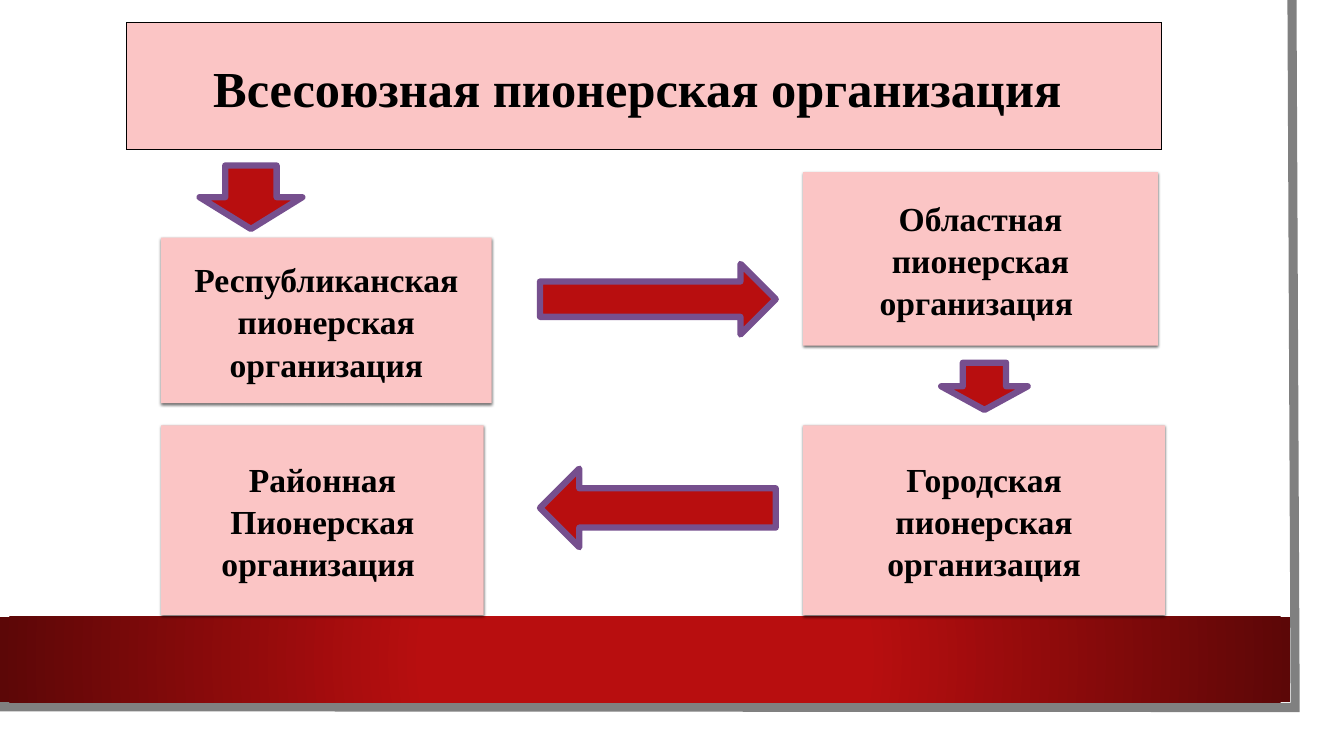
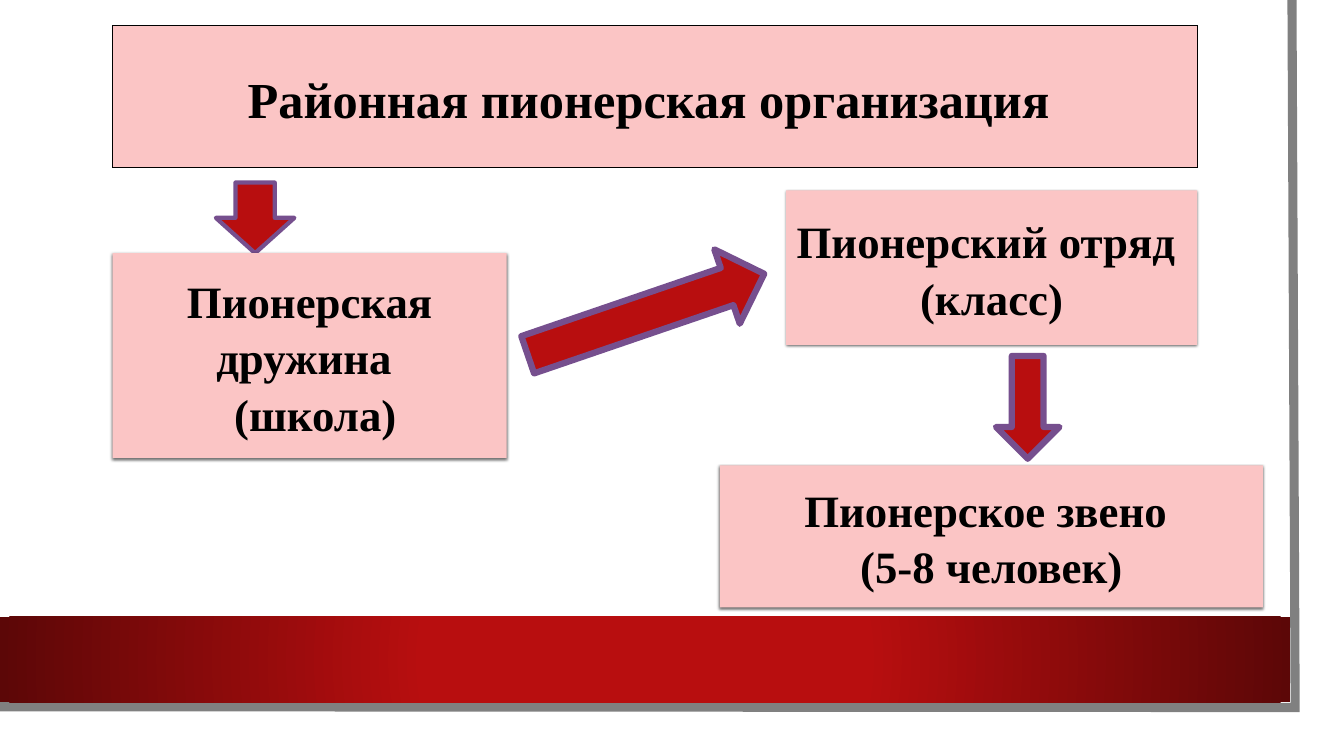
from lxml import etree
from pptx import Presentation
from pptx.dml.color import RGBColor
from pptx.enum.shapes import MSO_SHAPE as Shape
from pptx.enum.text import MSO_ANCHOR as Anchor, PP_ALIGN as Align
from pptx.oxml import parse_xml
from pptx.oxml.ns import qn
from pptx.util import Cm, Pt

# Shared look
FONT = "Times New Roman"
WHITE, BLACK, GREY = "FFFFFF", "000000", "808080"
PINK, RED, DARK_RED, PURPLE = "FBC5C5", "B80E0F", "5C0707", "764F8E"
TITLE_SIZE = 36
LINE_SPACING = 1.05
EDGE = [(32.56, 0), (32.64, 17.83), (0, 17.81)]
BAND = (0, 15.54, 32.51, 2.16)
DOWN, RIGHT, LEFT = Shape.DOWN_ARROW, Shape.RIGHT_ARROW, Shape.LEFT_ARROW

# Content: places are left, top, width, height in centimetres;
# an arrow is kind, place, line width, rotation
SLIDES = [
    {
        "title": ("Всесоюзная пионерская организация ", (3.18, 0.58, 26.09, 3.18)),
        "size": 24,
        "boxes": [
            (["Республиканская пионерская", "организация"], (4.06, 5.99, 8.33, 4.17)),
            (["Областная пионерская организация "], (20.24, 4.34, 8.94, 4.37)),
            (["Городская", "пионерская организация"], (20.24, 10.72, 9.12, 4.78)),
            (["Районная", "Пионерская", "организация "], (4.06, 10.72, 8.13, 4.78)),
        ],
        "arrows": [
            (DOWN, (5.03, 4.17, 2.59, 1.6), 4.5, 0),
            (RIGHT, (13.61, 6.65, 5.94, 1.78), 4.5, 0),
            (DOWN, (23.72, 9.14, 2.18, 1.19), 4.5, 0),
            (LEFT, (13.61, 11.81, 5.94, 1.98), 4.5, 0),
        ],
    },
    {
        "title": ("Районная пионерская организация ", (2.84, 0.64, 27.33, 3.58)),
        "size": 32,
        "boxes": [
            (["Пионерская дружина ", " (школа)"], (2.84, 6.38, 9.93, 5.16)),
            (["Пионерский отряд ", "(класс)"], (19.81, 4.8, 10.36, 3.89)),
            (["Пионерское звено ", "(5-8 человек)"], (18.14, 11.73, 13.69, 3.58)),
        ],
        "arrows": [
            (DOWN, (5.44, 4.6, 1.98, 1.78), 3, 0),
            (RIGHT, (13.13, 6.93, 6.3, 1.98), 4.5, 341.1),
            (DOWN, (25.1, 8.97, 1.6, 2.59), 4.5, 0),
        ],
    },
]

DRAWING = 'xmlns:a="http://schemas.openxmlformats.org/drawingml/2006/main"'
BAND_FILL = f"""<a:gradFill {DRAWING} rotWithShape="1"><a:gsLst>
<a:gs pos="34000"><a:srgbClr val="{RED}"/></a:gs>
<a:gs pos="100000"><a:srgbClr val="{DARK_RED}"/></a:gs></a:gsLst>
<a:path path="circle"><a:fillToRect l="50000" t="50000" r="50000" b="50000"/></a:path>
</a:gradFill>"""
BOX_SHADOW = f"""<a:outerShdw {DRAWING} blurRad="{Pt(2)}" dist="{Pt(1)}" dir="5400000"
rotWithShape="0"><a:srgbClr val="{BLACK}"><a:alpha val="60000"/></a:srgbClr></a:outerShdw>"""


def colour(value):
    return RGBColor.from_string(value)


def set_line(shape, value, width, join):
    shape.line.color.rgb = colour(value)
    shape.line.width = Pt(width)
    outline = shape._element.spPr.find(qn("a:ln"))
    corner = etree.SubElement(outline, qn(f"a:{join}"))
    if join == "miter":
        corner.set("lim", "800000")


def add_block(page, kind, place, fill):
    block = page.shapes.add_shape(kind, *map(Cm, place))
    block.shadow.inherit = False
    block.fill.solid()
    block.fill.fore_color.rgb = colour(fill)
    block.line.fill.background()
    return block


def add_frame(page):
    # Grey edge on the right and bottom
    (left, top), *corners = [(Cm(x), Cm(y)) for x, y in EDGE]
    builder = page.shapes.build_freeform(left, top)
    builder.add_line_segments(corners, close=False)
    edge = builder.convert_to_shape()
    edge.shadow.inherit = False
    edge.fill.background()
    set_line(edge, GREY, 6.5, "miter")
    # Red band
    band = add_block(page, Shape.RECTANGLE, BAND, RED)
    properties = band._element.spPr
    properties.replace(properties.find(qn("a:solidFill")), parse_xml(BAND_FILL))


def add_box(page, lines, place, size):
    box = add_block(page, Shape.RECTANGLE, place, PINK)
    frame = box.text_frame
    frame.word_wrap = True
    frame.vertical_anchor = Anchor.MIDDLE
    for index, line in enumerate(lines):
        para = frame.add_paragraph() if index else frame.paragraphs[0]
        para.alignment = Align.CENTER
        para.line_spacing = LINE_SPACING
        span = para.add_run()
        span.text = line
        span.font.name = FONT
        span.font.size = Pt(size)
        span.font.bold = True
        span.font.color.rgb = colour(BLACK)
    return box


def add_arrow(page, kind, place, width, rotation):
    arrow = add_block(page, kind, place, RED)
    set_line(arrow, PURPLE, width, "round")
    arrow.rotation = rotation


def build_slide(deck, content):
    page = deck.slides.add_slide(deck.slide_layouts[6])
    page.background.fill.solid()
    page.background.fill.fore_color.rgb = colour(WHITE)
    add_frame(page)
    # Title panel
    title, place = content["title"]
    panel = add_box(page, [title], place, TITLE_SIZE)
    set_line(panel, BLACK, 0.75, "miter")
    # Arrows, then the organisations they lead to
    for arrow in content["arrows"]:
        add_arrow(page, *arrow)
    for lines, place in content["boxes"]:
        box = add_box(page, lines, place, content["size"])
        effects = box._element.spPr.find(qn("a:effectLst"))
        effects.append(parse_xml(BOX_SHADOW))


def main():
    deck = Presentation()
    deck.slide_width, deck.slide_height = Cm(33.87), Cm(19.05)
    for content in SLIDES:
        build_slide(deck, content)
    deck.save("out.pptx")


if __name__ == "__main__":
    main()
